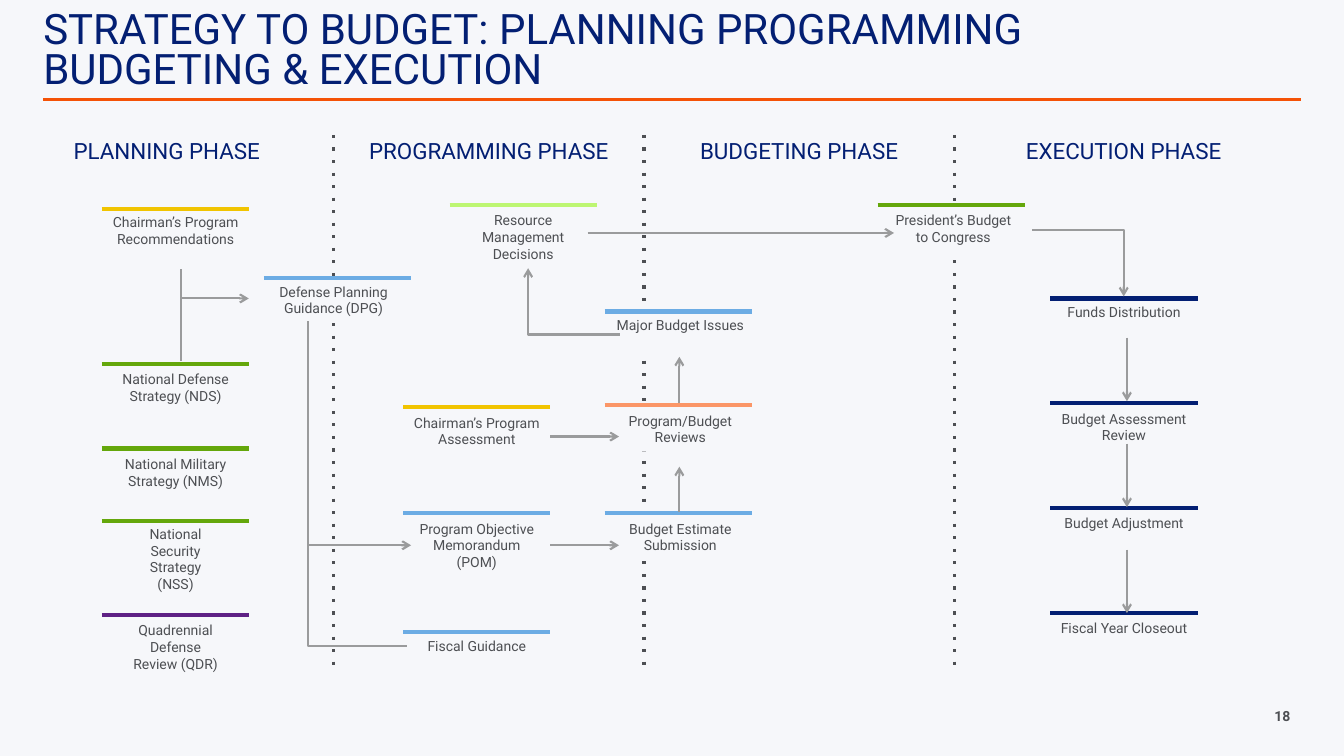
from dataclasses import dataclass
from itertools import pairwise

from lxml.etree import SubElement
from pptx import Presentation
from pptx.dml.color import RGBColor
from pptx.enum.shapes import MSO_CONNECTOR, MSO_SHAPE
from pptx.enum.text import MSO_ANCHOR as Anchor, MSO_AUTO_SIZE as AutoSize, PP_ALIGN as Align
from pptx.oxml.ns import qn
from pptx.util import Cm, Pt


# Content; all positions are in centimetres
TITLE = "STRATEGY TO BUDGET: PLANNING PROGRAMMING\vBUDGETING & EXECUTION"
PAGE = "18"
PHASES = ["PLANNING PHASE", "PROGRAMMING PHASE", "BUDGETING PHASE", "EXECUTION PHASE"]
PHASE_EDGES = [0, 8.41, 16.23, 24.05, 32.59]

PLANNING, PROGRAMMING, REVIEW, EXECUTION = 2.57, 10.16, 15.24, 26.47
WIDE, NARROW = 3.71, 2.72

# text, bar colour, bar left, bar top, gap from bar to text, text width
STEPS = [
    ("Chairman’s Program Recommendations", "yellow", PLANNING, 5.26, 0, WIDE),
    ("National Defense Strategy (NDS)", "green", PLANNING, 9.17, 0.05, WIDE),
    ("National Military Strategy (NMS)", "green", PLANNING, 11.3, 0.05, WIDE),
    ("National Security Strategy (NSS)", "green", PLANNING, 13.13, -0.02, NARROW),
    ("Quadrennial Defense Review (QDR)", "purple", PLANNING, 15.49, 0.05, NARROW),
    ("Resource Management Decisions", "lime", 11.33, 5.16, 0.05, NARROW),
    ("Chairman’s Program Assessment", "yellow", PROGRAMMING, 10.26, 0.05, WIDE),
    ("Program Objective Memorandum (POM)", "blue", PROGRAMMING, 12.93, 0.05, WIDE),
    ("Fiscal Guidance", "blue", PROGRAMMING, 15.93, 0.02, WIDE),
    ("Funds Distribution", "navy", EXECUTION, 7.52, 0, WIDE),
    ("Budget Assessment Review", "navy", EXECUTION, 10.16, 0.05, WIDE),
    ("Budget Adjustment", "navy", EXECUTION, 12.8, 0.03, WIDE),
    ("Fiscal Year Closeout", "navy", EXECUTION, 15.44, 0.05, WIDE),
    ("President’s Budget to Congress", "green", 22.12, 5.16, 0.05, WIDE),
    ("Defense Planning Guidance (DPG)", "blue", 6.65, 7.01, 0, WIDE),
    ("Major Budget Issues", "blue", REVIEW, 7.85, 0, WIDE),
    ("Program/Budget Reviews", "orange", REVIEW, 10.21, 0.05, WIDE),
    ("Budget Estimate Submission", "blue", REVIEW, 12.93, 0.05, WIDE),
]
# Steps that cover a phase separator, with the sideways shift of their text
CROSSING = {
    "President’s Budget to Congress": 0.05,
    "Defense Planning Guidance (DPG)": -0.1,
    "Major Budget Issues": 0.05,
    "Program/Budget Reviews": 0.05,
    "Budget Estimate Submission": 0.05,
}

PLAIN_FLOWS = [
    [(4.57, 6.78), (4.57, 9.09)],
    [(7.77, 8.1), (7.77, 16.28), (10.26, 16.28)],
]
ARROW_FLOWS = [
    [(4.57, 7.52), (6.27, 7.52)],
    [(7.77, 13.74), (10.36, 13.74)],
    [(13.87, 13.74), (15.6, 13.74)],
    [(13.87, 11), (15.6, 11)],
    [(15.62, 8.43), (13.31, 8.43), (13.31, 6.76)],
    [(17.12, 10.16), (17.12, 8.99)],
    [(17.12, 12.9), (17.12, 11.76)],
    [(14.81, 5.87), (22.53, 5.87)],
    [(26.01, 5.79), (28.32, 5.79), (28.32, 7.47)],
] + [[(28.4, 8.51 + 2.67 * i), (28.4, 10.11 + 2.67 * i)] for i in range(3)]


@dataclass(frozen=True)
class Theme:
    font: str = "Roboto"
    background: str = "F6F7FA"
    navy: str = "031F73"
    text: str = "4D4F53"
    rule: str = "F45206"
    flow: str = "9A9B9C"
    yellow: str = "F1C400"
    green: str = "64A70B"
    purple: str = "5F2185"
    lime: str = "BDF672"
    blue: str = "6CACE4"
    orange: str = "FB9667"
    title_size: int = 30
    phase_size: int = 16
    body_size: int = 10


THEME = Theme()
rgb = RGBColor.from_string


def write(shape, words, size, color, align=Align.CENTER, wrap=True, bold=False):
    frame = shape.text_frame
    frame.text = words
    frame.word_wrap = wrap
    frame.auto_size = AutoSize.NONE
    frame.vertical_anchor = Anchor.TOP
    paragraph = frame.paragraphs[0]
    paragraph.alignment = align
    font = paragraph.font
    font.name, font.size, font.bold = THEME.font, Pt(size), bold
    font.color.rgb = rgb(color)
    return frame


def add_label(words, left, top, width, height, size, color, **style):
    box = slide.shapes.add_textbox(Cm(left), Cm(top), Cm(width), Cm(height))
    write(box, words, size, color, **style)


def add_line(points, color, weight, dotted=False, arrow=False):
    corners = [(Cm(x), Cm(y)) for x, y in points]
    if len(corners) == 2:
        line = slide.shapes.add_connector(MSO_CONNECTOR.STRAIGHT, *corners[0], *corners[1])
    else:
        builder = slide.shapes.build_freeform(*corners[0])
        builder.add_line_segments(corners[1:], close=False)
        line = builder.convert_to_shape()
        line.fill.background()
    line.line.color.rgb = rgb(color)
    line.line.width = Pt(weight)
    outline = line.line._get_or_add_ln()
    if dotted:
        SubElement(outline, qn("a:prstDash"), val="dot")
    if arrow:
        SubElement(outline, qn("a:tailEnd"), type="arrow")
    SubElement(line._element.spPr, qn("a:effectLst"))


def add_step(words, bar_color, left, top, gap, width):
    text_left = left + (WIDE - width) / 2 + CROSSING.get(words, 0)
    if words in CROSSING:
        mask = slide.shapes.add_shape(
            MSO_SHAPE.RECTANGLE, Cm(text_left), Cm(top + gap), Cm(width), Cm(1.12))
        mask.fill.solid()
        mask.fill.fore_color.rgb = rgb(THEME.background)
        mask.line.fill.background()
        mask.shadow.inherit = False
        write(mask, words, THEME.body_size, THEME.text)
    else:
        add_label(words, text_left, top + gap, width, 1.12, THEME.body_size, THEME.text)
    add_line([(left, top), (left + WIDE, top)], getattr(THEME, bar_color), 3)


prs = Presentation()
prs.slide_width, prs.slide_height = Cm(33.87), Cm(19.05)
slide = prs.slides.add_slide(prs.slide_layouts[5])
slide.background.fill.solid()
slide.background.fill.fore_color.rgb = rgb(THEME.background)

# Title, rule and page number
title = slide.shapes.title
title.left, title.top, title.width, title.height = Cm(1.09), Cm(0), Cm(32.56), Cm(2.64)
heading = write(title, TITLE, THEME.title_size, THEME.navy, align=Align.LEFT)
heading.vertical_anchor = Anchor.MIDDLE
heading.margin_left, heading.margin_right = Cm(0), Cm(0.51)
heading.margin_top = heading.margin_bottom = Cm(0.25)
heading.paragraphs[0].line_spacing = 0.8
add_line([(1.09, 2.51), (32.79, 2.51)], THEME.rule, 2.25)
add_label(PAGE, 31.85, 17.7, 0.94, 0.69, THEME.body_size, THEME.text, wrap=False, bold=True)

# Phase headings and separators
for phase, (start, end) in zip(PHASES, pairwise(PHASE_EDGES)):
    add_label(phase, start, 3.33, end - start, 0.94, THEME.phase_size, THEME.navy)
for edge in PHASE_EDGES[1:-1]:
    add_line([(edge, 3.4), (edge, 16.97)], THEME.text, 2.25, dotted=True)

# Steps
for step in STEPS:
    add_step(*step)

# Flows between steps
for flow in PLAIN_FLOWS:
    add_line(flow, THEME.flow, 1.5)
for flow in ARROW_FLOWS:
    add_line(flow, THEME.flow, 1.5, arrow=True)

prs.save("out.pptx")
